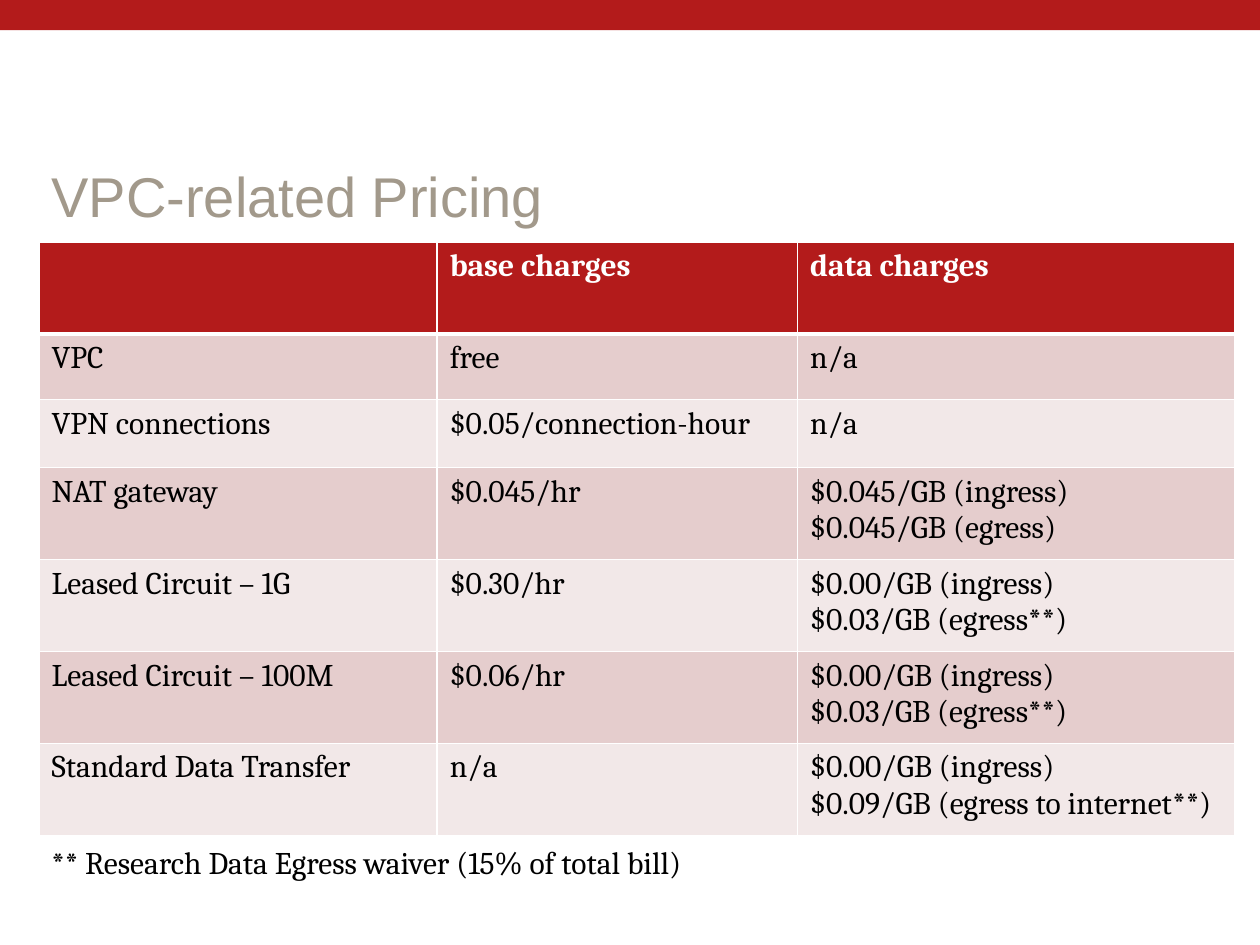
import pptx
import pptx.util
import pptx.dml.color
import pptx.enum.shapes
import pptx.enum.text
import pptx.oxml
import pptx.oxml.ns
from pptx.util import Inches

THEME = {
    "red": "B31B1B",
    "white": "FFFFFF",
    "bands": ["E5CDCD", "F2E8E8"],
    "title": {"name": "Arial", "size": 32, "color": "A2998B"},
    "head": {"name": "Cambria", "size": 18, "color": "FFFFFF", "bold": True},
    "body": {"name": "Cambria", "size": 18, "color": "000000", "bold": False},
}
LEFT, WIDTH = Inches(0.31), Inches(9.49)


def write(frame, text, style):
    """Fill a text frame, one paragraph per line, in a theme style."""
    frame.text = text
    for para in frame.paragraphs:
        for run in para.runs:
            for key, value in style.items():
                if key == "color":
                    run.font.color.rgb = pptx.dml.color.RGBColor.from_string(value)
                else:
                    setattr(run.font, key, pptx.util.Pt(value) if key == "size" else value)


def edge(cell, low):
    """Draw white cell borders; low is the bottom width in points."""
    props = cell._tc.get_or_add_tcPr()
    for spot, side in enumerate("LRTB"):
        wide = pptx.util.Pt(low if side == "B" else 1)
        line = pptx.oxml.parse_xml(
            f'<a:ln{side} {pptx.oxml.ns.nsdecls("a")} w="{wide}"><a:solidFill>'
            f'<a:srgbClr val="{THEME["white"]}"/></a:solidFill></a:ln{side}>')
        props.insert(spot, line)


deck = pptx.Presentation()
deck.slide_width, deck.slide_height = Inches(10), Inches(7.5)
slide = deck.slides.add_slide(deck.slide_layouts[6])

bar = slide.shapes.add_shape(
    pptx.enum.shapes.MSO_SHAPE.RECTANGLE, 0, 0, deck.slide_width, Inches(0.24))
bar.shadow.inherit = False
bar.fill.solid()
bar.fill.fore_color.rgb = pptx.dml.color.RGBColor.from_string(THEME["red"])
bar.line.fill.background()

title = slide.shapes.add_textbox(LEFT, Inches(1.17), WIDTH, Inches(0.75)).text_frame
title.word_wrap = True
title.vertical_anchor = pptx.enum.text.MSO_ANCHOR.MIDDLE
write(title, "VPC-related Pricing", THEME["title"])

rows = [
    ["", "base charges", "data charges"],
    ["VPC", "free", "n/a"],
    ["VPN connections", "$0.05/connection-hour", "n/a"],
    ["NAT gateway", "$0.045/hr", "$0.045/GB (ingress)\n$0.045/GB (egress)"],
    ["Leased Circuit – 1G", "$0.30/hr", "$0.00/GB (ingress)\n$0.03/GB (egress**)"],
    ["Leased Circuit – 100M", "$0.06/hr", "$0.00/GB (ingress)\n$0.03/GB (egress**)"],
    ["Standard Data Transfer", "n/a", "$0.00/GB (ingress)\n$0.09/GB (egress to internet**)"],
]
widths = [3.16, 2.86, 3.47]
heights = [0.73, 0.52, 0.54] + [0.73] * 4

table = slide.shapes.add_table(
    len(rows), len(widths), LEFT, Inches(1.92), WIDTH, Inches(sum(heights))).table
for col, wide in zip(table.columns, widths):
    col.width = Inches(wide)
for r, (texts, high) in enumerate(zip(rows, heights)):
    table.rows[r].height = Inches(high)
    tint = THEME["bands"][(r - 1) % 2] if r else THEME["red"]
    for c, text in enumerate(texts):
        cell = table.cell(r, c)
        write(cell.text_frame, text, THEME["body" if r else "head"])
        cell.fill.solid()
        cell.fill.fore_color.rgb = pptx.dml.color.RGBColor.from_string(tint)
        edge(cell, 1 if r else 3)

note = slide.shapes.add_textbox(LEFT, Inches(6.64), Inches(5.35), Inches(0.4)).text_frame
note.word_wrap = False
note.auto_size = pptx.enum.text.MSO_AUTO_SIZE.SHAPE_TO_FIT_TEXT
write(note, "** Research Data Egress waiver (15% of total bill)", THEME["body"])

deck.save("out.pptx")
